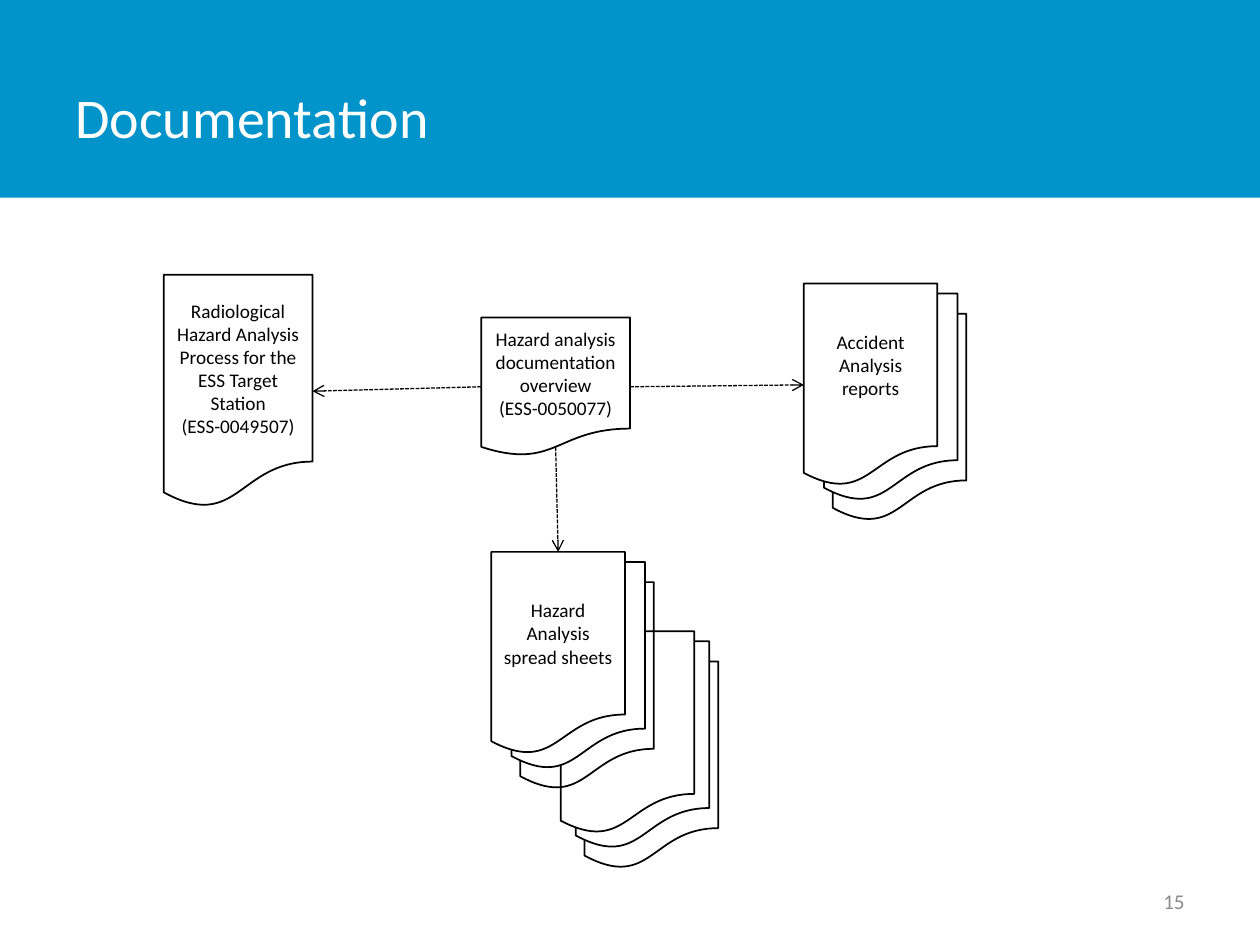
from lxml import etree
from pptx import Presentation
from pptx.dml.color import RGBColor
from pptx.enum.dml import MSO_LINE
from pptx.enum.shapes import MSO_CONNECTOR, MSO_SHAPE
from pptx.enum.text import MSO_ANCHOR, PP_ALIGN
from pptx.oxml.ns import qn
from pptx.util import Inches, Pt

BLUE = RGBColor(0x00, 0x94, 0xCA)
WHITE = RGBColor(0xFF, 0xFF, 0xFF)
BLACK = RGBColor(0x00, 0x00, 0x00)
GRAY = RGBColor(0x8C, 0x8C, 0x8C)
DOCUMENT = MSO_SHAPE.FLOWCHART_DOCUMENT
RECTANGLE = MSO_SHAPE.RECTANGLE
STRAIGHT = MSO_CONNECTOR.STRAIGHT
SHORT_DASH = MSO_LINE.SQUARE_DOT
MIDDLE = MSO_ANCHOR.MIDDLE
LEFT, CENTER, RIGHT = PP_ALIGN.LEFT, PP_ALIGN.CENTER, PP_ALIGN.RIGHT
TOP_SIDE, LEFT_SIDE, BOTTOM_SIDE, RIGHT_SIDE = range(4)


def write_text(shape, text, size=11, color=BLACK, align=CENTER):
    frame = shape.text_frame
    frame.word_wrap = True
    frame.vertical_anchor = MIDDLE
    frame.text = text
    for paragraph in frame.paragraphs:
        paragraph.alignment = align
        paragraph.font.name = "Calibri"
        paragraph.font.size = Pt(size)
        paragraph.font.color.rgb = color


def add_document(left, top, width, height, filled=False):
    shape = slide.shapes.add_shape(
        DOCUMENT, Inches(left), Inches(top), Inches(width), Inches(height))
    shape.shadow.inherit = False
    if filled:
        shape.fill.solid()
        shape.fill.fore_color.rgb = WHITE
    else:
        shape.fill.background()
    shape.line.color.rgb = BLACK
    shape.line.width = Pt(1)
    return shape


presentation = Presentation()
presentation.slide_width = Inches(10)
presentation.slide_height = Inches(7.5)
slide = presentation.slides.add_slide(presentation.slide_layouts[6])

# Title band, title and page number
band = slide.shapes.add_shape(RECTANGLE, 0, 0, Inches(10), Inches(1.57))
band.shadow.inherit = False
band.fill.solid()
band.fill.fore_color.rgb = BLUE
band.line.fill.background()

title = slide.shapes.add_textbox(Inches(0.5), Inches(0.3), Inches(7.81), Inches(1.25))
write_text(title, "Documentation", size=32, color=WHITE, align=LEFT)
page_number = slide.shapes.add_textbox(
    Inches(7.17), Inches(6.95), Inches(2.33), Inches(0.4))
write_text(page_number, "15", size=12, color=GRAY, align=RIGHT)

# Stacks of three sheets, drawn from the back sheet to the front one
stacks = [
    (4.45, 5.01, 0.12, ""),
    (3.9, 4.38, 0.16, "Hazard Analysis spread sheets"),
    (6.38, 2.25, 0.16, "Accident Analysis reports"),
]
front_sheets = []
for left, top, step, text in stacks:
    add_document(left + step + 0.07, top + 0.24, 1.06, 1.65)
    add_document(left + step, top + 0.08, 1.06, 1.65, filled=True)
    front = add_document(left, top, 1.06, 1.61, filled=True)
    if text:
        write_text(front, text)
    front_sheets.append(front)
_, spread_sheets, accident_reports = front_sheets

# Single documents
overview = add_document(3.82, 2.52, 1.18, 1.1)
write_text(overview, "Hazard analysis documentation overview\n(ESS-0050077)")
process = add_document(1.3, 2.18, 1.18, 1.85)
write_text(process, "Radiological Hazard Analysis Process for the "
                    "ESS Target Station (ESS-0049507)")

# Dashed arrows from the overview to the other documents
arrows = [
    (LEFT_SIDE, process, RIGHT_SIDE),
    (RIGHT_SIDE, accident_reports, LEFT_SIDE),
    (BOTTOM_SIDE, spread_sheets, TOP_SIDE),
]
for start_side, target, end_side in arrows:
    arrow = slide.shapes.add_connector(STRAIGHT, 0, 0, 0, 0)
    arrow.begin_connect(overview, start_side)
    arrow.end_connect(target, end_side)
    if start_side == BOTTOM_SIDE:
        arrow.begin_y = Inches(3.55)  # the wavy edge lies above the frame
    arrow.line.color.rgb = BLACK
    arrow.line.width = Pt(0.75)
    arrow.line.dash_style = SHORT_DASH
    line = arrow.line._get_or_add_ln()
    etree.SubElement(line, qn("a:tailEnd"), type="arrow")
    etree.SubElement(arrow._element.spPr, qn("a:effectLst"))

presentation.save("out.pptx")
